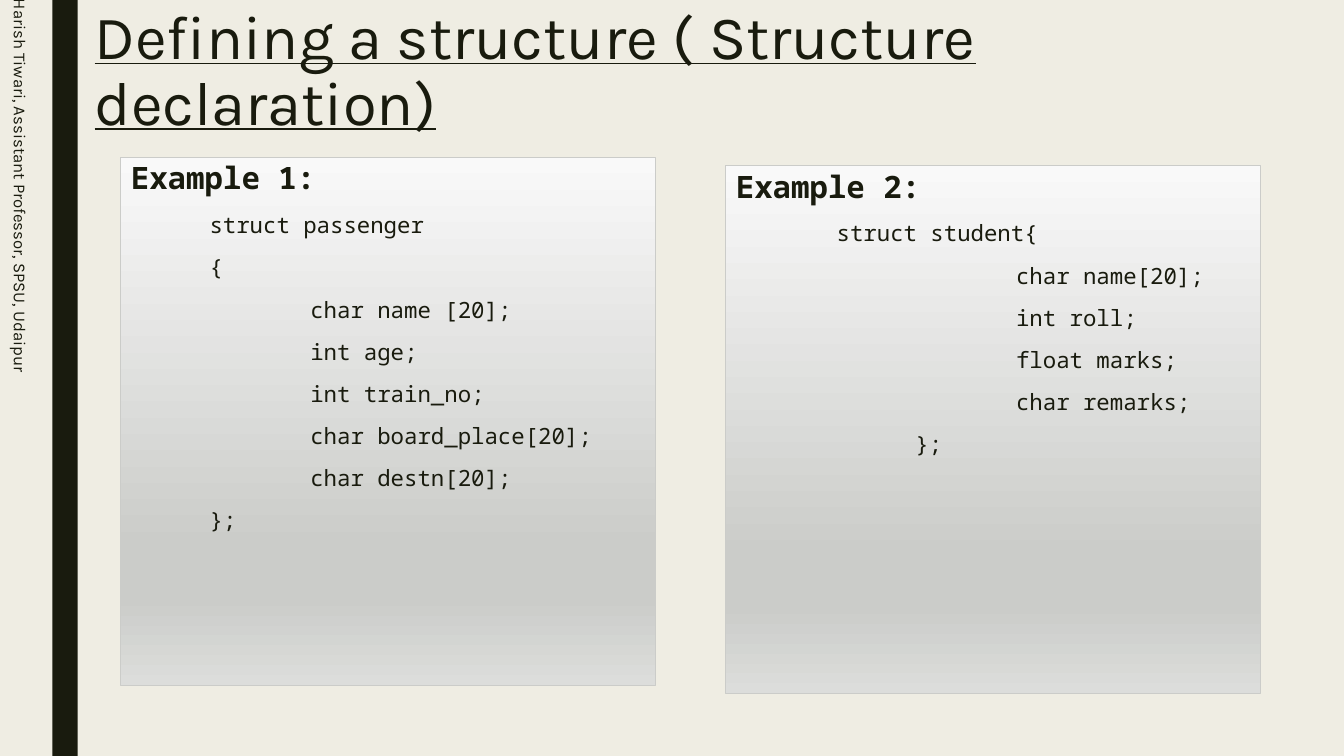
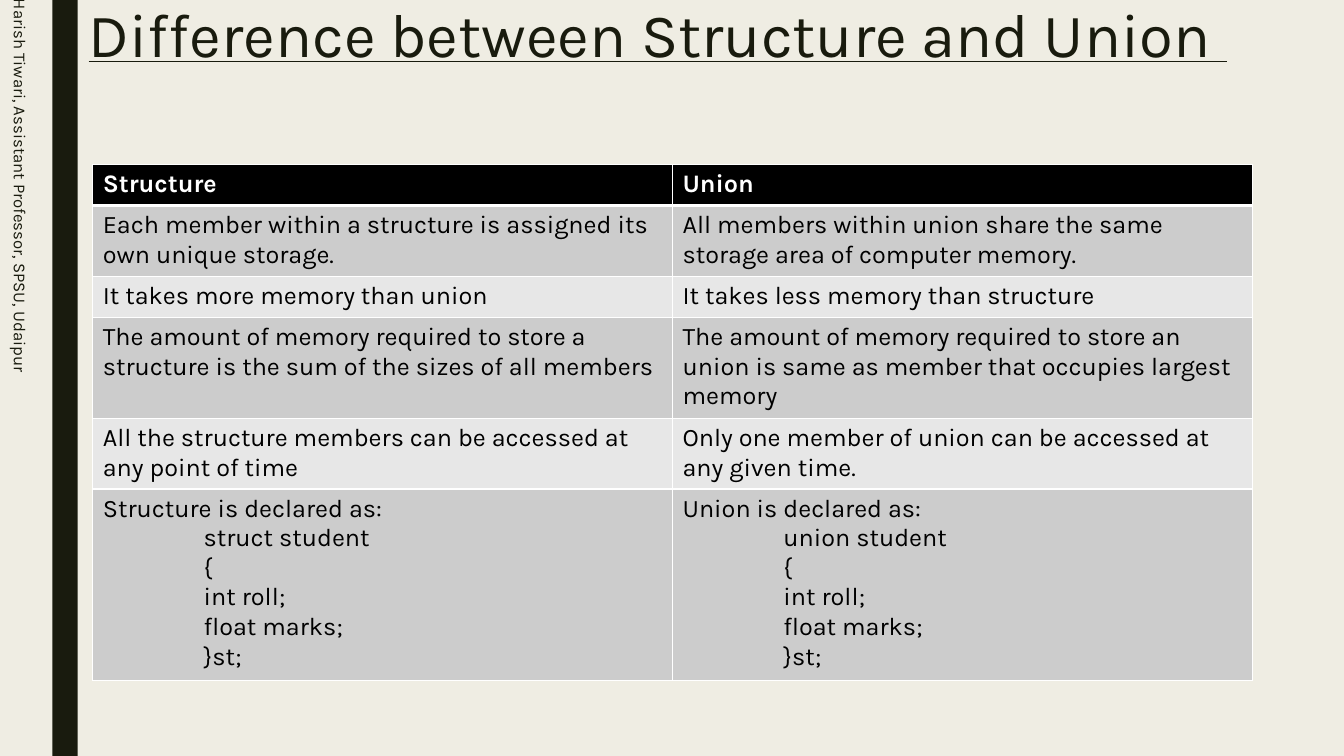
from lxml import etree
from pptx import Presentation
from pptx.dml.color import RGBColor
from pptx.enum.shapes import MSO_SHAPE
from pptx.enum.text import MSO_ANCHOR, PP_ALIGN
from pptx.oxml.ns import qn
from pptx.util import Inches, Pt

RECT = MSO_SHAPE.RECTANGLE
TOP, MID = MSO_ANCHOR.TOP, MSO_ANCHOR.MIDDLE
LEFT = PP_ALIGN.LEFT
HUES = {
    "back": "EFEDE3", "ink": "191B0E", "edge": "CBCCC9", "pale": "F9F9F9",
    "foot": "DCDDDB", "white": "FFFFFF", "black": "000000",
    "odd": "CCCCCC", "even": "E7E7E7",
}
FADE = [(0, "pale"), (74, "edge"), (83, "edge"), (100, "foot")]
SANS, MONO = "Karla", "Noto Sans Mono"
FOOTER = "Harish Tiwari, Assistant Professor, SPSU, Udaipur"


def hue(name):
    return RGBColor.from_string(HUES[name])


class Deck:
    def __init__(self):
        self.prs = Presentation()
        self.prs.slide_width = Inches(13.33)
        self.prs.slide_height = Inches(7.5)
        self.slide = None

    def page(self, title, left, top, width):
        self.slide = self.prs.slides.add_slide(self.prs.slide_layouts[6])
        fill = self.slide.background.fill
        fill.solid()
        fill.fore_color.rgb = hue("back")
        band = self.rect(0.52, 0, 0.25, 7.5)
        band.fill.solid()
        band.fill.fore_color.rgb = hue("ink")
        band.line.fill.background()
        para = self.label(title, left, top, width, 1.62, 44)
        para.line_spacing = 0.89
        para.runs[0].font.underline = True
        self.label(FOOTER, 0, -0.01, 0.41, 7.5, 12, True)

    def rect(self, *box):
        shape = self.slide.shapes.add_shape(RECT, *map(Inches, box))
        shape.shadow.inherit = False
        return shape

    def style(self, para, size, face=SANS, color="ink", bold=False):
        para.alignment = LEFT
        para._p.get_or_add_pPr().set("defTabSz", str(Inches(1)))
        for run in para.runs:
            font = run.font
            font.size, font.name, font.bold = Pt(size), face, bold
            font.color.rgb = hue(color)

    def label(self, text, left, top, width, height, size, turn=False):
        box = self.slide.shapes.add_textbox(*map(Inches, (left, top, width, height)))
        frame = box.text_frame
        frame.word_wrap = True
        frame.vertical_anchor = MID if turn else TOP
        frame.text = text
        if turn:
            frame._txBody.bodyPr.set("vert", "vert")
            frame.margin_top = 0
        para = frame.paragraphs[0]
        self.style(para, size)
        return para

    def panel(self, left, top, lines, flat):
        shape = self.rect(left, top, 5.3, 5.24)
        shape.fill.gradient()
        shape.fill.gradient_angle = 270
        stops = shape._element.spPr.find(".//" + qn("a:gsLst"))
        for stop in list(stops):
            stops.remove(stop)
        for pos, name in FADE:
            stop = etree.SubElement(stops, qn("a:gs"), pos=str(pos * 1000))
            etree.SubElement(stop, qn("a:srgbClr"), val=HUES[name])
        shape.line.color.rgb = hue("edge")
        shape.line.width = Pt(0.75)
        frame = shape.text_frame
        frame.word_wrap = True
        frame.vertical_anchor = TOP
        frame.text = "\n".join(lines)
        for idx, para in enumerate(frame.paragraphs):
            head = idx == 0
            self.style(para, 22 if head else 16, MONO, bold=head)
            para.line_spacing = 0.94
            para.space_before, para.space_after = Pt(10), Pt(2)
            if idx >= flat:
                props = para._p.get_or_add_pPr()
                props.set("marL", str(Inches(0.78)))
                props.set("indent", "0")

    def edges(self, cell, head):
        props = cell._tc.get_or_add_tcPr()
        for side in "LRTB":
            width = Pt(3 if head and side == "B" else 1)
            line = etree.SubElement(props, qn("a:ln" + side), w=str(width))
            fill = etree.SubElement(line, qn("a:solidFill"))
            etree.SubElement(fill, qn("a:srgbClr"), val=HUES["white"])

    def table(self, rows, left, top, width, high):
        box = map(Inches, (left, top, width, high * len(rows)))
        grid = self.slide.shapes.add_table(len(rows), len(rows[0]), *box).table
        grid.horz_banding = False
        for num, texts in enumerate(rows):
            head = num == 0
            tone = "black" if head else "odd" if num % 2 else "even"
            for col, text in enumerate(texts):
                cell = grid.cell(num, col)
                self.edges(cell, head)
                cell.fill.solid()
                cell.fill.fore_color.rgb = hue(tone)
                cell.text_frame.text = text
                for para in cell.text_frame.paragraphs:
                    self.style(para, 18, color="white" if head else "black", bold=head)


def code(name, word):
    return (f"{name} is declared as:\n\t{word} student\n\t{{\n"
            "\tint roll;\n\tfloat marks;\n\t}st;")


def main():
    deck = Deck()
    deck.page("Defining a structure ( Structure declaration)", 0.84, 0.02, 11.96)
    deck.panel(1.2, 1.56, [
        "Example 1:", "struct passenger", "{", "\tchar name [20];", "\tint age;",
        "\tint train_no;", "\tchar board_place[20];", "\tchar destn[20];", "};",
    ], 1)
    deck.panel(7.2, 1.64, [
        "Example 2:", "\tstruct student{", "\t\tchar name[20];", "\t\tint roll;",
        "\t\tfloat marks;", "\t\tchar remarks;", "\t};",
    ], 2)

    deck.page("Difference between Structure and Union ", 0.78, 0, 11.78)
    deck.table([
        ("Structure", "Union"),
        ("Each member within a structure is assigned its own unique storage.",
         "All members within union share the same storage area of computer memory."),
        ("It takes more memory than union", "It takes less memory than structure"),
        ("The amount of memory required to store a structure is the sum of the "
         "sizes of all members",
         "The amount of memory required to store an union is same as member that "
         "occupies largest memory"),
        ("All the structure members can be accessed at any point of time",
         "Only one member of union can be accessed at any given time."),
        (code("Structure", "struct"), code("Union", "union")),
    ], 0.92, 1.63, 11.5, 0.41)
    deck.prs.save("out.pptx")


if __name__ == "__main__":
    main()
